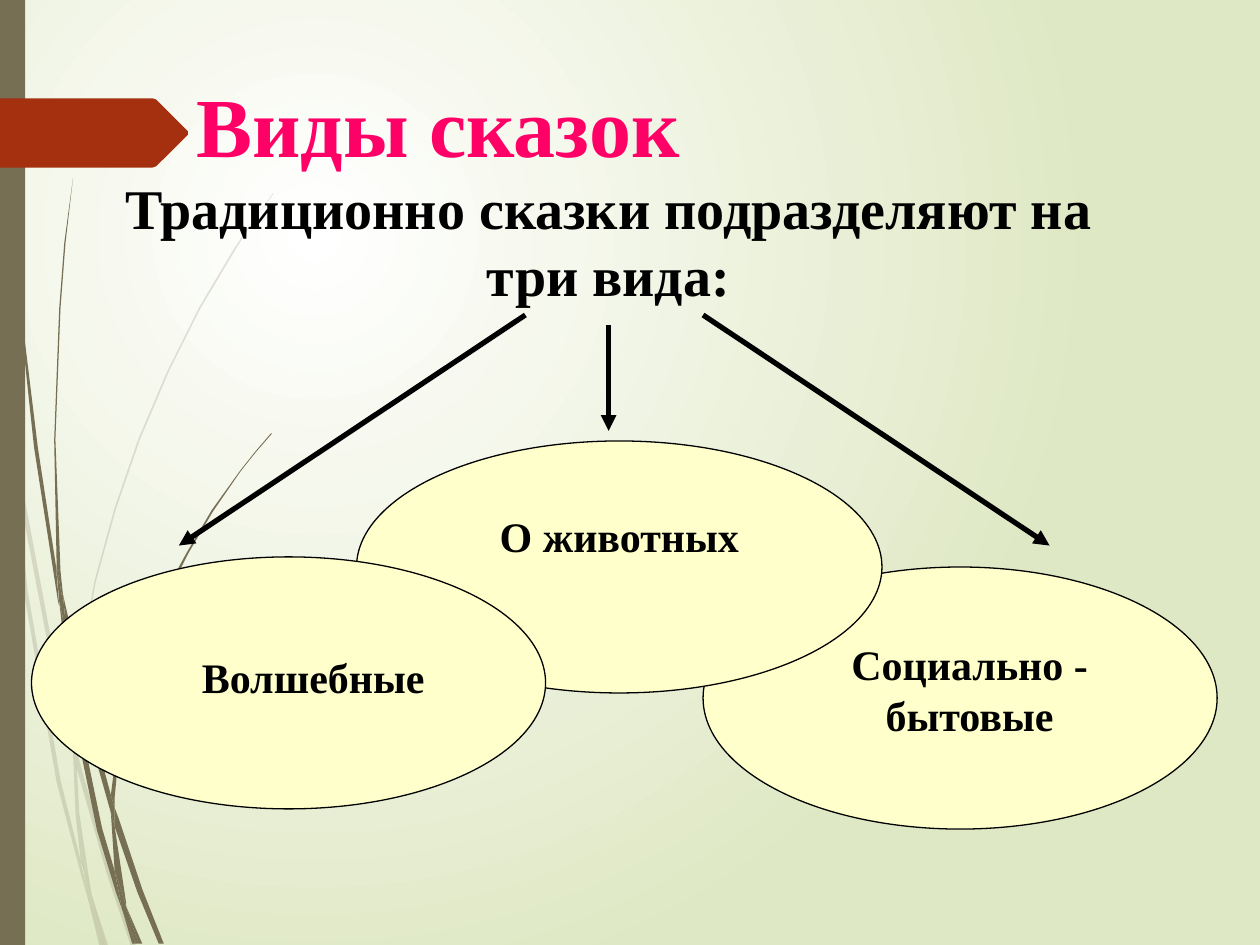
import dataclasses

import pptx
import pptx.dml.color
import pptx.enum.dml
import pptx.enum.shapes
import pptx.enum.text
import pptx.oxml
import pptx.oxml.ns
import pptx.util
from lxml import etree

PX = 9144
A = pptx.oxml.ns.nsdecls("a")


@dataclasses.dataclass(frozen=True)
class Theme:
    font: str = "Times New Roman"
    glow: str = "FFFFFF"
    meadow: str = "DFE8C4"
    grass: str = "766F54"
    tab: str = "A53010"
    heading: str = "FF0066"
    ink: str = "000000"
    bubble: str = "FFFFCC"
    heading_size: int = 48
    lead_size: int = 32
    label_size: int = 24
    outline: float = 0.75
    arrow: int = 3


def rgb(value):
    return pptx.dml.color.RGBColor.from_string(value)


class Sketch:
    def __init__(self, slide, theme):
        self.slide = slide
        self.shapes = slide.shapes
        self.theme = theme

    def backdrop(self):
        fill = self.slide.background.fill
        fill.gradient()
        for stop, color in zip(fill.gradient_stops, (self.theme.glow, self.theme.meadow)):
            stop.color.rgb = rgb(color)
        gradient = self.slide.background._cSld.find(".//" + pptx.oxml.ns.qn("a:gradFill"))
        gradient.remove(gradient.find(pptx.oxml.ns.qn("a:lin")))
        gradient.append(pptx.oxml.parse_xml(
            f'<a:path {A} path="circle"><a:fillToRect l="50000" t="50000" r="100000" b="100000"/></a:path>'))

    def paint(self, shape, color, outline=None, opacity=100):
        shape.shadow.inherit = False
        shape.fill.solid()
        shape.fill.fore_color.rgb = rgb(color)
        if opacity < 100:
            tint = shape._element.spPr.find(".//" + pptx.oxml.ns.qn("a:srgbClr"))
            etree.SubElement(tint, pptx.oxml.ns.qn("a:alpha"), val=str(opacity * 1000))
        if outline:
            shape.line.color.rgb = rgb(outline)
            shape.line.width = pptx.util.Pt(self.theme.outline)
        else:
            shape.line.fill.background()

    def outline(self, points, color, opacity=100):
        builder = self.shapes.build_freeform(*points[0], scale=PX)
        builder.add_line_segments(points[1:], close=True)
        self.paint(builder.convert_to_shape(), color, opacity=opacity)

    def preset(self, kind, box, color, outline=None):
        shape = self.shapes.add_shape(kind, *(v * PX for v in box))
        self.paint(shape, color, outline)

    def text(self, words, box, size, color, centred=True, top=5):
        frame = self.shapes.add_textbox(*(v * PX for v in box)).text_frame
        frame.word_wrap = True
        frame.margin_top = top * PX
        paragraph = frame.paragraphs[0]
        paragraph.text = words
        if centred:
            paragraph.alignment = pptx.enum.text.PP_ALIGN.CENTER
        font = paragraph.font
        font.name, font.size, font.bold = self.theme.font, pptx.util.Pt(size), True
        font.color.rgb = rgb(color)

    def arrow(self, start, end):
        line = self.shapes.add_connector(
            pptx.enum.shapes.MSO_CONNECTOR.STRAIGHT, *(v * PX for v in start + end))
        line.line.color.rgb = rgb(self.theme.ink)
        line.line.width = pptx.util.Pt(self.theme.arrow)
        line.line._ln.append(pptx.oxml.parse_xml(f'<a:tailEnd {A} type="triangle"/>'))
        line._element.spPr.append(pptx.oxml.parse_xml(f"<a:effectLst {A}/>"))

    def fairy_tale_kind(self, label, bubble, label_box, start, end):
        theme = self.theme
        self.preset(pptx.enum.shapes.MSO_SHAPE.OVAL, bubble, theme.bubble, theme.ink)
        self.text(label, label_box, theme.label_size, theme.ink)
        self.arrow(start, end)


FADED_GRASS = [
    [(8, 350), (6, 322), (0, 282), (0, 299), (7, 344)],
    [(40, 522), (59, 599), (59, 586), (43, 520), (10, 345), (12, 376)],
    [(64, 607), (61, 596), (61, 610), (85, 694), (104, 751), (108, 751), (88, 692)],
    [(83, 751), (86, 751), (73, 711)],
    [(64, 683), (48, 619), (22, 469), (12, 376), (8, 350), (19, 470), (45, 621),
     (64, 693), (70, 714), (69, 707)],
    [(58, 599), (60, 646), (64, 683), (67, 692), (73, 711), (72, 706), (63, 646),
     (61, 610), (61, 608)],
    [(61, 584), (65, 522), (76, 462), (92, 404), (111, 349), (134, 295), (159, 245),
     (187, 198), (201, 175), (217, 154), (217, 153), (201, 175), (186, 197), (158, 244),
     (133, 294), (110, 348), (91, 403), (75, 461), (64, 522), (59, 584), (59, 586), (61, 596)],
    [(70, 714), (79, 751), (82, 751)],
    [(61, 608), (61, 610), (61, 596), (59, 586), (58, 599)],
    [(67, 692), (65, 683), (69, 707), (70, 714), (82, 751), (83, 751), (73, 711)],
]
GRASS = [
    [(5, 110), (14, 233), (27, 355), (46, 477), (47, 481), (45, 457), (45, 453),
     (30, 355), (15, 232), (6, 109), (4, 48), (3, 0), (2, 0), (3, 48)],
    [(73, 592), (88, 645), (88, 633), (88, 631), (77, 590), (50, 472), (53, 505)],
    [(94, 649), (91, 641), (91, 656), (109, 708), (126, 749), (130, 749), (113, 706)],
    [(91, 691), (81, 657), (60, 556), (53, 505), (47, 477), (56, 557), (77, 659),
     (92, 708), (97, 722), (96, 717)],
    [(50, 472), (48, 453), (44, 349), (48, 245), (52, 193), (58, 141), (51, 193),
     (47, 245), (43, 349), (45, 449), (49, 472)],
    [(110, 749), (113, 749), (100, 719)],
    [(47, 477), (53, 505), (50, 472), (49, 472), (45, 449), (45, 453)],
    [(91, 633), (95, 591), (103, 552), (115, 513), (131, 476), (149, 440), (169, 406),
     (191, 374), (203, 359), (216, 344), (215, 344), (203, 358), (191, 373), (168, 405),
     (148, 439), (129, 474), (113, 512), (101, 551), (93, 591), (88, 631), (91, 641)],
    [(97, 722), (105, 749), (108, 749)],
    [(88, 645), (91, 691), (96, 706), (100, 719), (100, 716), (91, 656), (90, 651)],
    [(88, 645), (90, 651), (91, 656), (91, 641), (88, 631), (88, 633)],
    [(96, 706), (91, 691), (96, 717), (97, 722), (108, 749), (110, 749), (100, 719)],
]
TAB = [(149, 107), (124, 132), (121, 133), (0, 133), (0, 78), (121, 78), (124, 79), (149, 104)]
KINDS = [
    ("Социально - бытовые", (558, 450, 408, 208), (597, 502, 345, 90), (558, 250), (833, 433)),
    ("О животных", (283, 350, 417, 200), (322, 400, 339, 50), (483, 258), (483, 342)),
    ("Волшебные", (25, 442, 408, 200), (89, 512, 319, 50), (417, 250), (142, 433)),
]


def main():
    deck = pptx.Presentation()
    deck.slide_width, deck.slide_height = 1000 * PX, 750 * PX
    theme = Theme()
    sketch = Sketch(deck.slides.add_slide(deck.slide_layouts[6]), theme)
    sketch.backdrop()
    for blades, opacity in ((FADED_GRASS, 20), (GRASS, 100)):
        for blade in blades:
            sketch.outline(blade, theme.grass, opacity)
    sketch.preset(pptx.enum.shapes.MSO_SHAPE.RECTANGLE, (0, 0, 20, 750), theme.grass)
    sketch.outline(TAB, theme.tab)
    sketch.text("Виды сказок", (146, 45, 708, 125), theme.heading_size, theme.heading,
                centred=False, top=13)
    sketch.text("Традиционно сказки подразделяют на три вида:", (58, 133, 850, 117),
                theme.lead_size, theme.ink)
    for kind in KINDS:
        sketch.fairy_tale_kind(*kind)
    deck.save("out.pptx")


if __name__ == "__main__":
    main()
